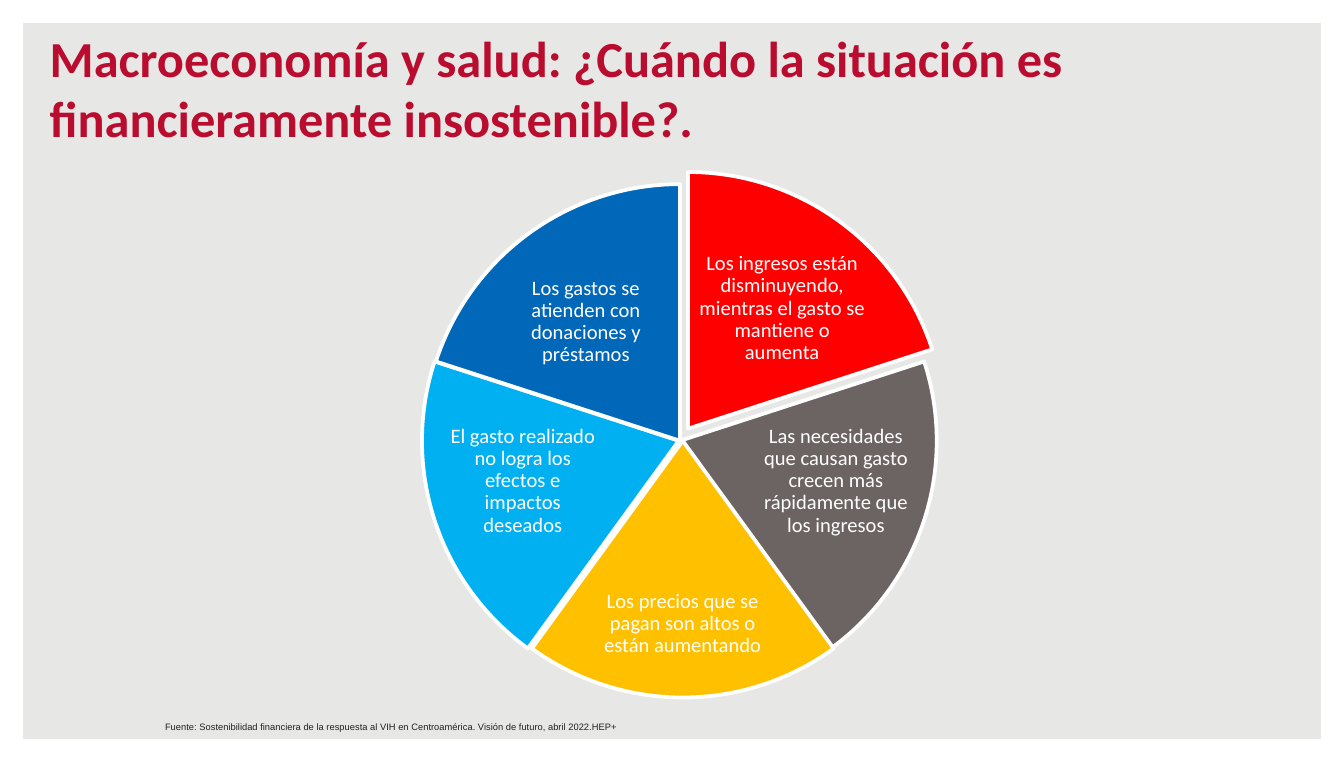
from pptx import Presentation
from pptx.dml.color import RGBColor
from pptx.enum.shapes import MSO_SHAPE
from pptx.enum.text import MSO_ANCHOR, MSO_AUTO_SIZE, PP_ALIGN
from pptx.util import Inches, Pt

WIDTH, HEIGHT = 10, 5.67


def color(target, hex_value):
    """Give a fill or a font a solid colour."""
    if hasattr(target, "solid"):
        target.solid()
        target = target.fore_color
    else:
        target = target.color
    target.rgb = RGBColor.from_string(hex_value)


def write(box, text, font, size, hex_value, align, anchor, bold=False):
    """Fill a box with one wrapped paragraph and format it."""
    frame = box.text_frame
    frame.text = text
    frame.word_wrap = True
    frame.auto_size = MSO_AUTO_SIZE.NONE
    frame.vertical_anchor = anchor
    para = frame.paragraphs[0]
    para.alignment = align
    span = para.runs[0]
    span.font.name = font
    span.font.size = Pt(size)
    span.font.bold = bold
    color(span.font, hex_value)
    return frame


deck = Presentation()
deck.slide_width, deck.slide_height = Inches(WIDTH), Inches(HEIGHT)
page = deck.slides.add_slide(deck.slide_layouts[5])
color(page.background.fill, "E7E7E5")

# White border around the page, behind the title
border = page.shapes.add_shape(
    MSO_SHAPE.FRAME, 0, 0, deck.slide_width, deck.slide_height)
border.adjustments[0] = 0.03
border.shadow.inherit = False
color(border.fill, "FFFFFF")
border.line.fill.background()

# Title
title = page.shapes.title
title.left, title.top = Inches(0.27), Inches(0.21)
title.width, title.height = Inches(9.54), Inches(0.94)
write(title, "Macroeconomía y salud: ¿Cuándo la situación es "
      "financieramente insostenible?.", "Calibri", 27, "BA0C2F",
      PP_ALIGN.LEFT, MSO_ANCHOR.BOTTOM, bold=True)

# Wheel of equal sectors, clockwise from the top:
# sector left and top, fill, label box, label
DIAMETER = 3.82
SECTORS = [
    (3.21, 1.28, "FF0000", (5.17, 1.85, 1.3, 0.89),
     "Los ingresos están disminuyendo, mientras el gasto se mantiene o aumenta"),
    (3.15, 1.37, "6C6463", (5.65, 3.1, 1.14, 0.96),
     "Las necesidades que causan gasto crecen más rápidamente que los ingresos"),
    (3.17, 1.37, "FFC000", (4.4, 4.23, 1.36, 0.82),
     "Los precios que se pagan son altos o están aumentando"),
    (3.14, 1.37, "00B0F0", (3.32, 3.1, 1.14, 0.96),
     "El gasto realizado no logra los efectos e impactos deseados"),
    (3.15, 1.37, "0067B9", (3.71, 1.95, 1.3, 0.89),
     "Los gastos se atienden con donaciones y préstamos"),
]
DEGREE = 0.6  # one degree in adjustment units
STEP = 360 / len(SECTORS)

for index, (left, top, fill, label_area, label) in enumerate(SECTORS):
    sector = page.shapes.add_shape(
        MSO_SHAPE.PIE, Inches(left), Inches(top),
        Inches(DIAMETER), Inches(DIAMETER))
    start = 270 + index * STEP
    sector.adjustments[0] = start % 360 * DEGREE
    sector.adjustments[1] = (start + STEP) % 360 * DEGREE
    sector.shadow.inherit = False
    color(sector.fill, fill)
    color(sector.line.fill, "FFFFFF")
    sector.line.width = Pt(2)

    box = page.shapes.add_textbox(*map(Inches, label_area))
    frame = write(box, label, "Calibri", 11, "FFFFFF",
                  PP_ALIGN.CENTER, MSO_ANCHOR.MIDDLE)
    frame.margin_left = frame.margin_right = Inches(0.02)
    frame.margin_top = frame.margin_bottom = Inches(0.02)
    frame.paragraphs[0].line_spacing = 0.9

# Source line
source = page.shapes.add_textbox(
    Inches(1.13), Inches(5.32), Inches(8.54), Inches(0.19))
write(source, "Fuente: Sostenibilidad financiera de la respuesta al VIH en "
      "Centroamérica. Visión de futuro, abril 2022.HEP+", "Arial", 5,
      "202124", PP_ALIGN.LEFT, MSO_ANCHOR.TOP)

deck.save("out.pptx")
